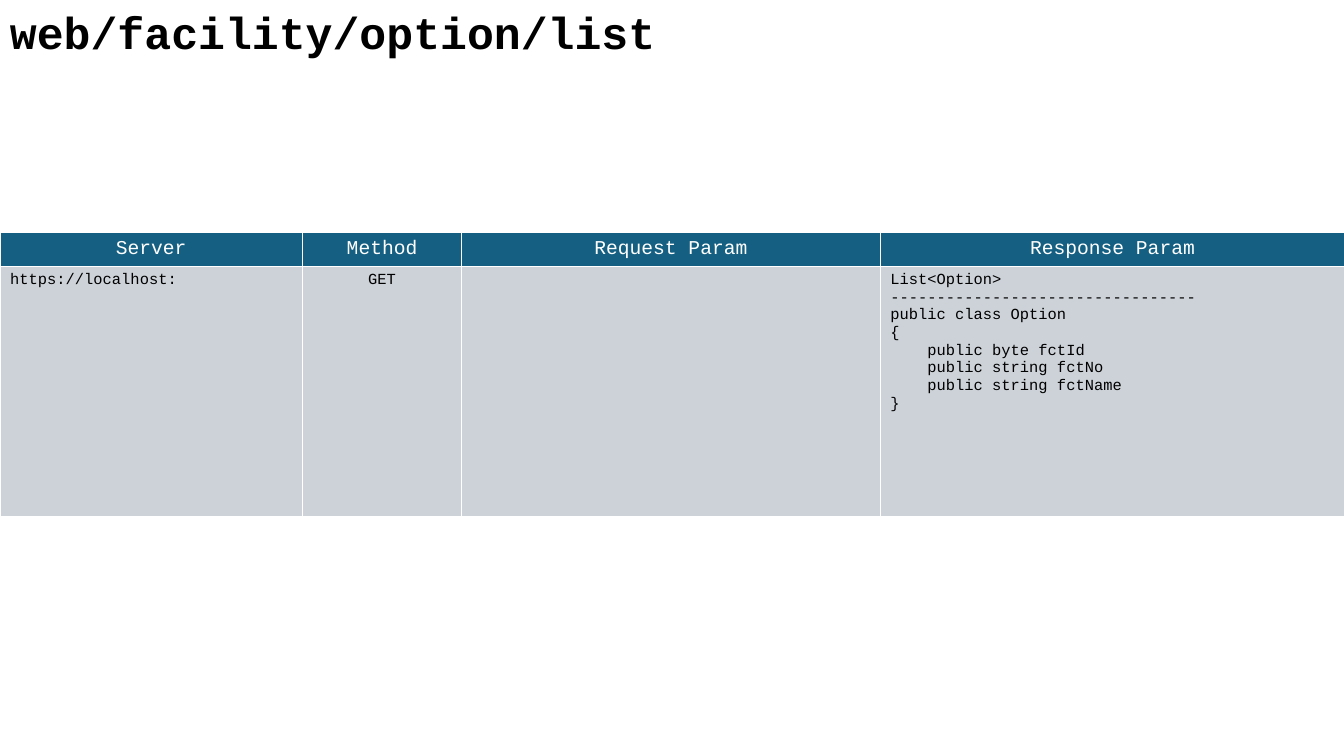
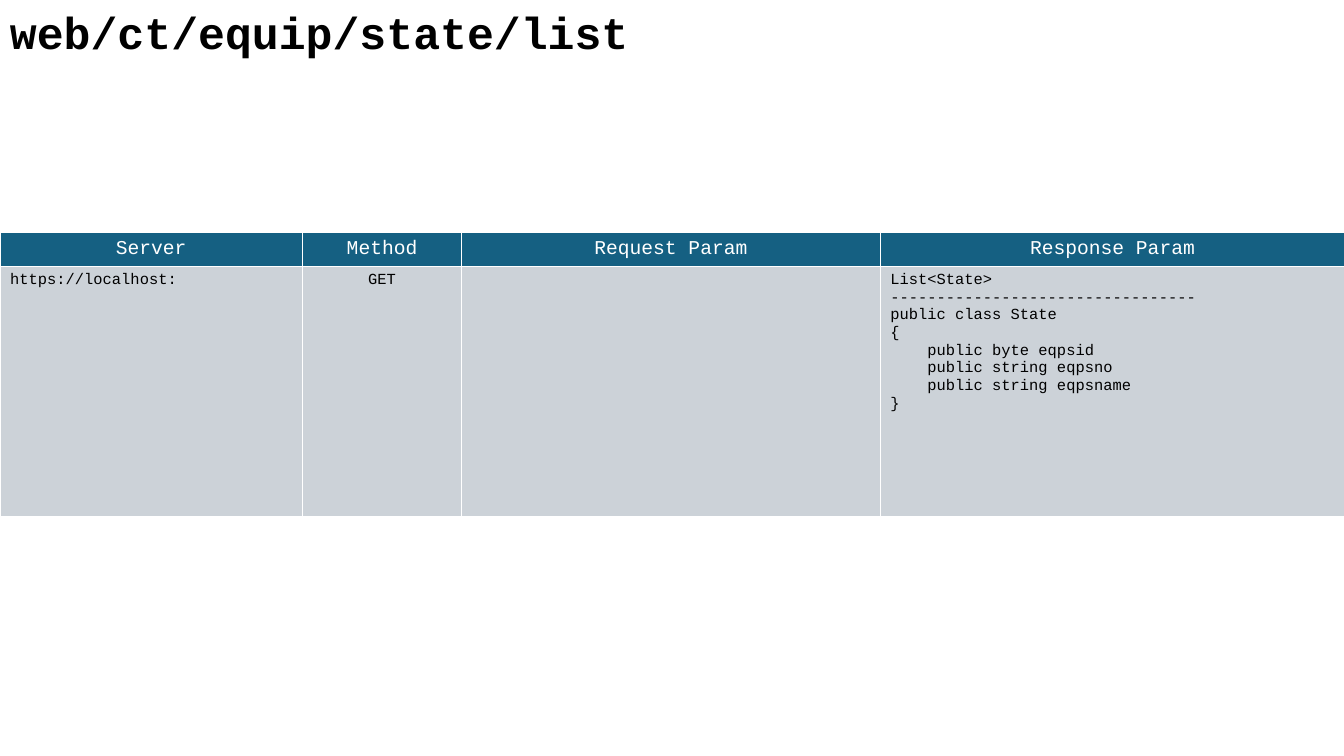
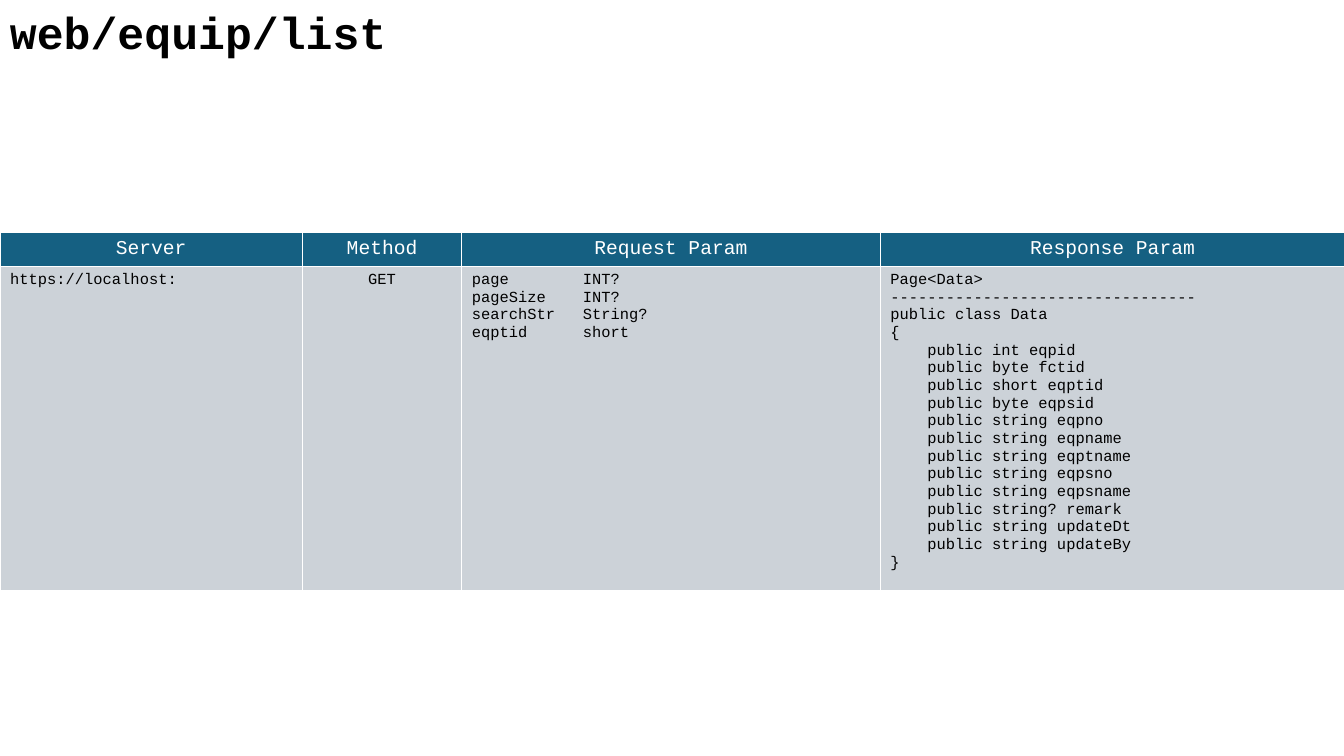
from lxml.etree import SubElement
from pptx import Presentation
from pptx.dml.color import RGBColor
from pptx.enum.text import MSO_AUTO_SIZE as AutoSize, PP_ALIGN as Align
from pptx.oxml.ns import qn
from pptx.util import Inches, Pt

HEADINGS = ["Server", "Method", "Request Param", "Response Param"]
ENDPOINTS = [
    ("web/facility/option/list", [], "List", "Option",
     ["byte fctId", "string fctNo", "string fctName"], 2.48),
    ("web/ct/equip/state/list", [], "List", "State",
     ["byte eqpsid", "string eqpsno", "string eqpsname"], 2.48),
    ("web/equip/list",
     ["page\tINT?", "pageSize\tINT?", "searchStr\tString?", "eqptid\tshort"],
     "Page", "Data",
     ["int eqpid", "byte fctid", "short eqptid", "byte eqpsid",
      "string eqpno", "string eqpname", "string eqptname", "string eqpsno",
      "string eqpsname", "string? remark", "string updateDt",
      "string updateBy"], 3.22),
]


def color(value):
    return RGBColor.from_string(value)


def response_lines(wrapper, name, fields):
    members = [f"    public {field}" for field in fields]
    return [f"{wrapper}<{name}>", "-" * 33, f"public class {name}", "{", *members, "}"]


class ApiDeck:
    """Holds the deck style and the page being built."""

    font = "Courier New"
    ink, white = "000000", "FFFFFF"
    header_fill, body_fill = "156082", "CCD2D8"
    columns = [3, 1.58, 4.15, 4.61]
    header_height = 0.33
    table_top = 2.31
    tab_position = 1.1

    def __init__(self):
        self.deck = Presentation()
        self.deck.slide_width = Inches(13.33)
        self.deck.slide_height = Inches(7.5)
        self.page = None

    def add_page(self):
        self.page = self.deck.slides.add_slide(self.deck.slide_layouts[6])

    def span(self, para, text, size, ink, bold=False):
        span = para.add_run()
        span.text = text
        span.font.name = self.font
        span.font.size = Pt(size)
        span.font.bold = bold
        span.font.color.rgb = color(ink)

    def title(self, text):
        box = self.page.shapes.add_textbox(0, 0, Inches(9.45), Inches(0.64))
        box.text_frame.word_wrap = True
        box.text_frame.auto_size = AutoSize.SHAPE_TO_FIT_TEXT
        self.span(box.text_frame.paragraphs[0], text, 32, self.ink, True)

    def tab_stop(self, para):
        stops = SubElement(para._p.get_or_add_pPr(), qn("a:tabLst"))
        SubElement(stops, qn("a:tab"), pos=str(Inches(self.tab_position)), algn="l")

    def borders(self, cell):
        properties = cell._tc.get_or_add_tcPr()
        for side in ("lnL", "lnR", "lnT", "lnB"):
            line = SubElement(properties, qn(f"a:{side}"), w=str(Pt(1)))
            fill = SubElement(line, qn("a:solidFill"))
            SubElement(fill, qn("a:srgbClr"), val=self.white)

    def cell(self, cell, lines, fill, size, ink, align):
        self.borders(cell)
        cell.fill.solid()
        cell.fill.fore_color.rgb = color(fill)
        for index, text in enumerate(lines):
            frame = cell.text_frame
            para = frame.add_paragraph() if index else frame.paragraphs[0]
            para.alignment = align
            if "\t" in text:
                self.tab_stop(para)
            self.span(para, text, size, ink)

    def table(self, request, response, body_height):
        heights = [self.header_height, body_height]
        table = self.page.shapes.add_table(
            2, len(self.columns), 0, Inches(self.table_top),
            Inches(sum(self.columns)), Inches(sum(heights))).table
        table.horz_banding = False
        for row, height in zip(table.rows, heights):
            row.height = Inches(height)
        bodies = [["https://localhost:"], ["GET"], request, response]
        for index, (width, heading, lines) in enumerate(zip(self.columns, HEADINGS, bodies)):
            table.columns[index].width = Inches(width)
            self.cell(table.cell(0, index), [heading], self.header_fill, 14,
                      self.white, Align.CENTER)
            align = Align.CENTER if heading == "Method" else Align.LEFT
            self.cell(table.cell(1, index), lines, self.body_fill, 11, self.ink, align)


def main():
    api = ApiDeck()
    for address, request, wrapper, name, fields, body_height in ENDPOINTS:
        api.add_page()
        api.title(address)
        api.table(request, response_lines(wrapper, name, fields), body_height)
    api.deck.save("out.pptx")


if __name__ == "__main__":
    main()
